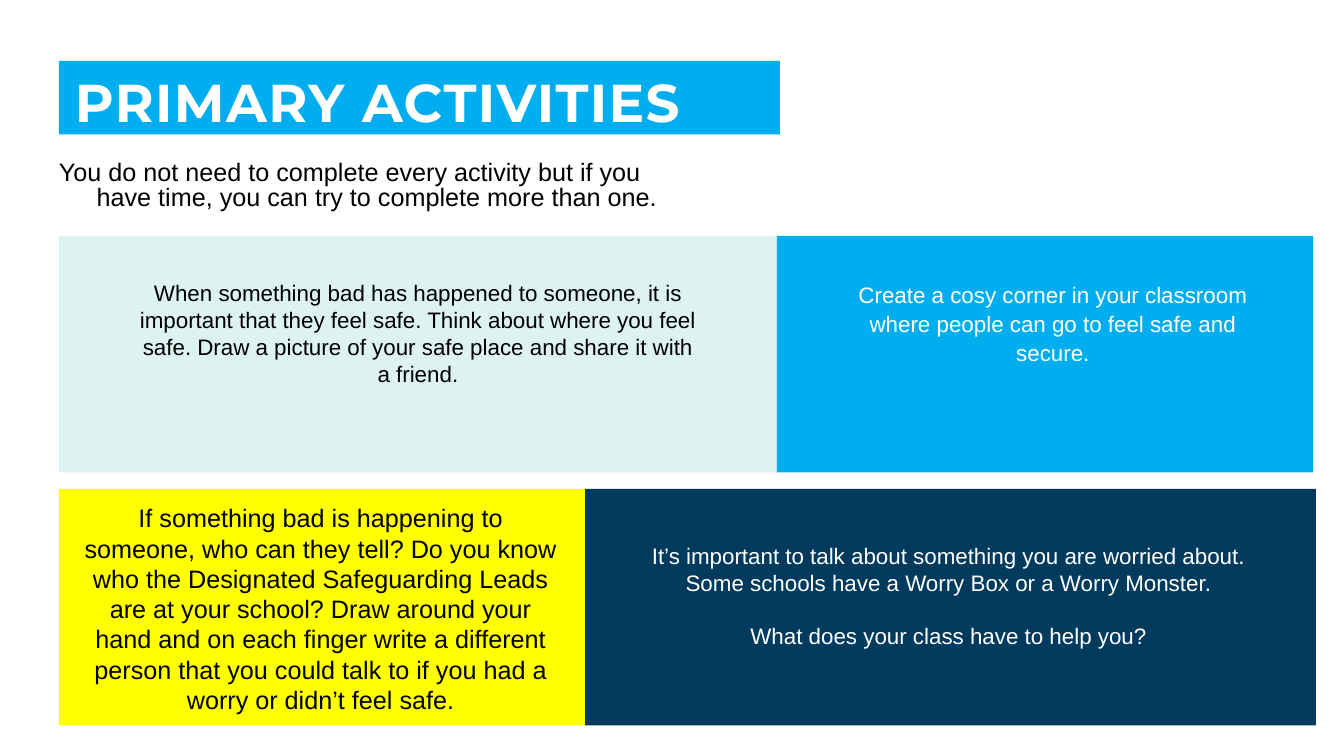
from lxml.etree import SubElement
from pptx import Presentation
from pptx.dml.color import RGBColor
from pptx.enum.shapes import MSO_SHAPE as Shape
from pptx.enum.text import MSO_ANCHOR as Anchor, MSO_AUTO_SIZE as Fit, PP_ALIGN as Align
from pptx.oxml.ns import qn
from pptx.util import Pt

BLACK = RGBColor(0, 0, 0)
WHITE = RGBColor(255, 255, 255)
BLUE = RGBColor(0x00, 0xAE, 0xEF)
MINT = RGBColor(0xDD, 0xF3, 0xF1)
YELLOW = RGBColor(255, 255, 0)
NAVY = RGBColor(0x00, 0x3B, 0x5E)

TITLE = "PRIMARY ACTIVITIES"
INTRO = ("You do not need to complete every activity but if you have time, "
         "you can try to complete more than one.")
SAFE = ["When something bad has happened to someone, it is important that they feel safe. "
        "Think about where you feel safe. Draw a picture of your safe place and share it "
        "with a friend."]
COSY = ["Create a cosy corner in your classroom where people can go to feel safe and secure."]
TELL = ["If something bad is happening to someone, who can they tell? Do you know who the "
        "Designated Safeguarding Leads are at your school? Draw around your hand and on each "
        "finger write a different person that you could talk to if you had a worry or "
        "didn’t feel safe."]
WORRY = ["It’s important to talk about something you are worried about. "
         "Some schools have a Worry Box or a Worry Monster.",
         "What does your class have to help you?"]

LEFT, TOP, HIGH, GAP = 42, 168.5, 169, 11.7
ROWS = [
    [(513, MINT, SAFE, BLACK, 16, 1, (90, 196, 417, 85)),
     (383, BLUE, COSY, WHITE, 16, 1.07, (590.5, 196, 323, 68))],
    [(376, YELLOW, TELL, BLACK, 18, 1, (52.5, 355.5, 353, 160)),
     (522, NAVY, WORRY, WHITE, 16, 1, (448, 384, 459, 104))],
]


def put(obj, vals):
    for key, val in vals.items():
        setattr(obj, key, val)


def place(shape, box):
    put(shape, dict(zip(("left", "top", "width", "height"), map(Pt, box))))


def write(para, text, color, form, **font):
    put(para, form)
    run = para.add_run()
    run.text = text
    put(run.font, font)
    run.font.color.rgb = color
    return run


def holder(shape, box, pads, anchor):
    place(shape, box)
    frame = shape.text_frame
    put(frame, dict(word_wrap=True, auto_size=Fit.NONE, vertical_anchor=anchor))
    sides = ("margin_left", "margin_top", "margin_right", "margin_bottom")
    put(frame, dict(zip(sides, map(Pt, pads))))
    para = frame.paragraphs[0]
    props = para._p.get_or_add_pPr()
    put(props, dict(marL=0, indent=0))
    SubElement(props, qn("a:buNone"))
    return para


def panel(slide, left, top, wide, fill):
    rect = slide.shapes.add_shape(Shape.RECTANGLE, Pt(left), Pt(top), Pt(wide), Pt(HIGH))
    rect.shadow.inherit = False
    rect.fill.solid()
    rect.fill.fore_color.rgb = fill
    rect.line.fill.background()


def label(slide, box, lines, color, size, space):
    frame = slide.shapes.add_textbox(*map(Pt, box)).text_frame
    frame.word_wrap = True
    for i, text in enumerate(lines):
        para = frame.add_paragraph() if i else frame.paragraphs[0]
        form = dict(alignment=Align.CENTER, line_spacing=space,
                    space_before=Pt(18.4 if i else 0))
        write(para, text, color, form, name="Arial", size=Pt(size))


def main():
    deck = Presentation()
    put(deck, dict(slide_width=Pt(960), slide_height=Pt(540)))
    slide = deck.slides.add_slide(deck.slide_layouts[1])
    head, body = slide.placeholders

    head.fill.solid()
    head.fill.fore_color.rgb = BLUE
    para = holder(head, (LEFT, 43.5, 515, 52.5), (11.5, 11.5, 8.6, 0), Anchor.MIDDLE)
    form = dict(alignment=Align.LEFT, line_spacing=0.9, space_before=Pt(0))
    run = write(para, TITLE, WHITE, form, name="Montserrat", size=Pt(38), bold=True)
    run._r.get_or_add_rPr().set("spc", "100")

    para = holder(body, (LEFT, 112.5, 447, 44.5), (0, 3.6, 7.2, 3.6), Anchor.TOP)
    form["line_spacing"] = 0.8
    write(para, INTRO, BLACK, form, name="Arial", size=Pt(18))

    for r, row in enumerate(ROWS):
        left = LEFT
        for wide, fill, lines, color, size, space, box in row:
            panel(slide, left, TOP + r * (HIGH + GAP), wide, fill)
            label(slide, box, lines, color, size, space)
            left += wide
    deck.save("out.pptx")


if __name__ == "__main__":
    main()
